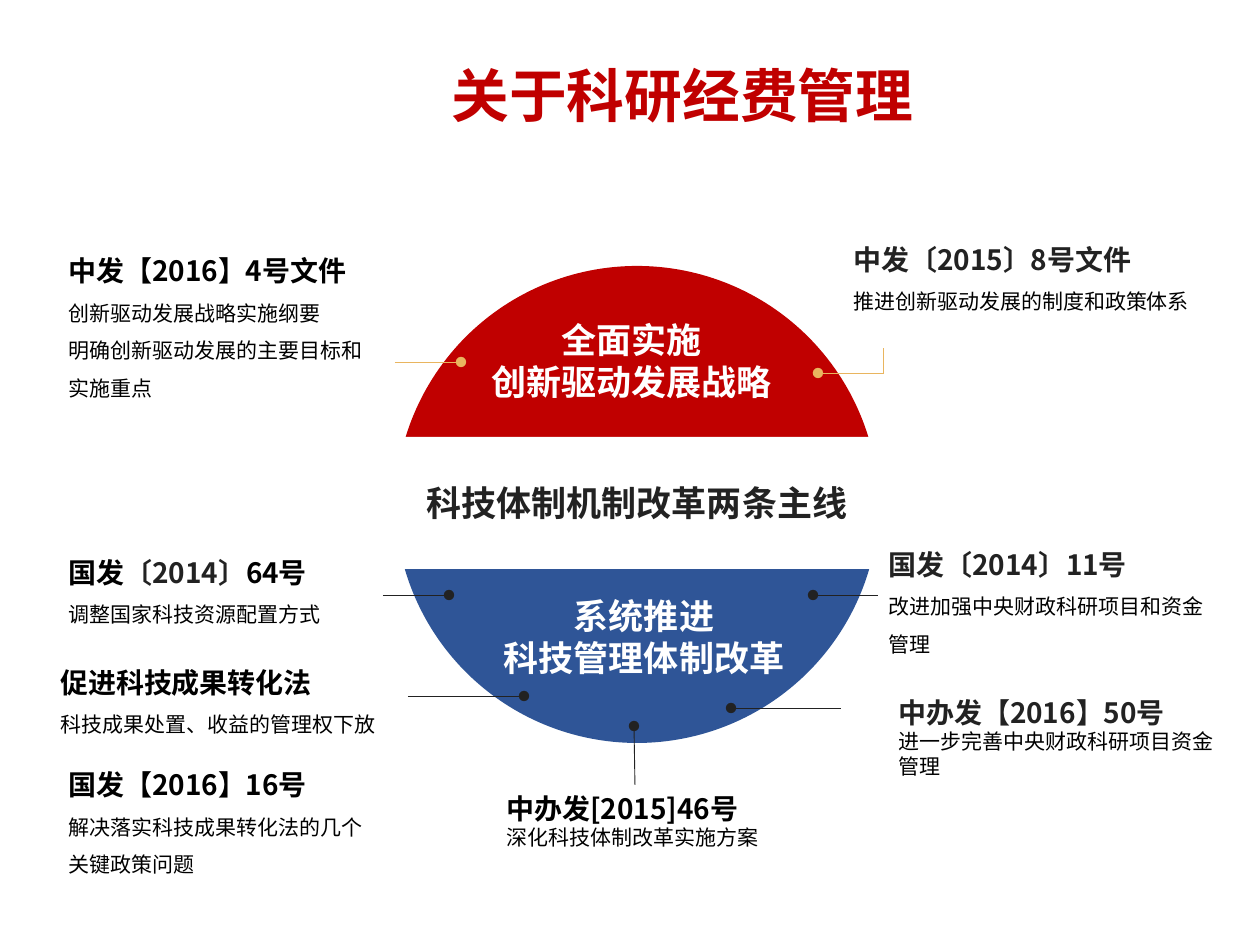
import math
from dataclasses import dataclass

import pptx
import pptx.dml.color
import pptx.enum.shapes
import pptx.enum.text
import pptx.oxml.ns
import pptx.util
from lxml import etree

PX = 914400 / 126
WIDTH, HEIGHT = 1260, 945


@dataclass(frozen=True)
class Theme:
    font: str = "Noto Sans CJK SC"
    red: str = "C00000"
    blue: str = "2F5597"
    gold: str = "E9B55F"
    dark: str = "222222"
    black: str = "000000"
    white: str = "FFFFFF"
    title: int = 33
    label: int = 20
    heading: int = 16
    body: int = 12
    hairline: float = 0.5


THEME = Theme()
ALIGN = pptx.enum.text.PP_ALIGN
ANCHOR = pptx.enum.text.MSO_ANCHOR
qn = pptx.oxml.ns.qn

# Half discs: centre x, centre y, radius, direction (1 down, -1 up), colour
HALF_DISCS = [
    (637, 501, 242, 1, THEME.blue),
    (637, 508, 242, -1, THEME.red),
]
BAND = (352, 437, 570, 132)

# Centred labels: frame, lines, size, colour
LABELS = [
    ((474, 312, 315, 97), ["全面实施", "创新驱动发展战略"], THEME.label, THEME.white),
    ((472, 588, 344, 97), ["系统推进", "科技管理体制改革"], THEME.label, THEME.white),
    (BAND, ["科技体制机制改革两条主线"], THEME.label, THEME.dark),
    ((168, 44, 1029, 100), ["关于科研经费管理"], THEME.title, THEME.red),
]

# Notes: frame, heading spans, body lines, heading spacing, body spacing
NOTES = {
    "innovation outline": (
        (56, 231, 328, 178), [("中发【2016】4号文件", THEME.black)],
        ["创新驱动发展战略实施纲要", "明确创新驱动发展的主要目标和实施重点"], 1.5, 1.5),
    "innovation system": (
        (841, 236, 418, 84), [("中发〔2015〕8号文件", THEME.dark)],
        ["推进创新驱动发展的制度和政策体系"], 1.0, 1.5),
    "resource allocation": (
        (56, 549, 387, 84),
        [("国发", THEME.black), ("〔2014〕", THEME.dark), ("64号", THEME.black)],
        ["调整国家科技资源配置方式"], 1.0, 1.5),
    "project funds": (
        (876, 541, 346, 123), [("国发〔2014〕11号", THEME.dark)],
        ["改进加强中央财政科研项目和资金管理"], 1.0, 1.5),
    "transfer law": (
        (48, 659, 393, 84), [("促进科技成果转化法", THEME.black)],
        ["科技成果处置、收益的管理权下放"], 1.0, 1.5),
    "transfer policy": (
        (56, 745, 339, 140), [("国发【2016】16号", THEME.black)],
        ["解决落实科技成果转化法的几个关键政策问题"], 1.5, 1.5),
    "reform plan": (
        (494, 785, 282, 72), [("中办发[2015]46号", THEME.black)],
        ["深化科技体制改革实施方案"], 1.0, 1.0),
    "fund management": (
        (886, 689, 343, 97), [("中办发【2016】50号", THEME.dark)],
        ["进一步完善中央财政科研项目资金管理"], 1.0, 1.0),
}

# Leaders: from, to, colour, dot at the end, note joined at its top
LEADERS = [
    ((883, 374), (883, 348), THEME.gold, False, None),
    ((884, 373), (818, 373), THEME.gold, True, None),
    ((395, 362), (461, 362), THEME.gold, True, None),
    ((878, 595), (813, 595), THEME.dark, True, None),
    ((383, 595), (449, 595), THEME.dark, True, None),
    ((408, 696), (524, 696), THEME.dark, True, None),
    ((635, 785), (634, 726), THEME.dark, True, "reform plan"),
    ((841, 708), (731, 708), THEME.dark, True, None),
]


def emu(*lengths):
    return [round(length * PX) for length in lengths]


def rgb(value):
    return pptx.dml.color.RGBColor.from_string(value)


def paint(shape, colour):
    shape.shadow.inherit = False
    shape.fill.solid()
    shape.fill.fore_color.rgb = rgb(colour)
    shape.line.fill.background()


def add_span(para, text, size, colour, bold):
    span = para.add_run()
    span.text = text
    values = {"name": THEME.font, "size": pptx.util.Pt(size), "bold": bold}
    for name, value in values.items():
        setattr(span.font, name, value)
    span.font.color.rgb = rgb(colour)
    east_asian = etree.SubElement(span.font._element, qn("a:ea"))
    east_asian.set("typeface", THEME.font)


def fill_text(box, rows, anchor, align):
    """Write rows of (spans, size, bold, line spacing) as paragraphs."""
    frame = box.text_frame
    frame.word_wrap = True
    frame.vertical_anchor = anchor
    for index, (spans, size, bold, spacing) in enumerate(rows):
        para = frame.add_paragraph() if index else frame.paragraphs[0]
        para.alignment = align
        para.line_spacing = spacing
        for text, colour in spans:
            add_span(para, text, size, colour, bold)


def add_half_disc(page, centre_x, centre_y, radius, direction, colour):
    """Draw a half disc whose rim is four Bezier arcs of equal angle."""
    turn = math.pi / 4
    reach = 4 / 3 * math.tan(turn / 4)
    top = centre_y if direction > 0 else centre_y - radius

    def rim(angle, pull=0):
        """Point on the rim, moved along the tangent by pull radii."""
        return (centre_x + radius * (math.cos(angle) - pull * math.sin(angle)),
                centre_y + direction * radius * (math.sin(angle) + pull * math.cos(angle)))

    angles = [turn * step for step in range(5)]
    builder = page.shapes.build_freeform(*emu(*rim(0)), scale=1.0)
    builder.add_line_segments([emu(*rim(angle)) for angle in angles[1:]], close=True)
    disc = builder.convert_to_shape()
    segments = list(disc._element.iter(qn("a:lnTo")))
    for segment, start, end in zip(segments, angles, angles[1:]):
        segment.tag = qn("a:cubicBezTo")
        for index, (x, y) in enumerate([rim(start, reach), rim(end, -reach)]):
            control = segment.makeelement(qn("a:pt"))
            for name, value in zip("xy", emu(x - centre_x + radius, y - top)):
                control.set(name, str(value))
            segment.insert(index, control)
    paint(disc, colour)


def add_label(page, frame, lines, size, colour):
    if frame == BAND:
        box = page.shapes.add_shape(pptx.enum.shapes.MSO_SHAPE.RECTANGLE, *emu(*frame))
        paint(box, THEME.white)
    else:
        box = page.shapes.add_textbox(*emu(*frame))
    rows = [([(line, colour)], size, True, 1.0) for line in lines]
    fill_text(box, rows, ANCHOR.MIDDLE, ALIGN.CENTER)


def add_note(page, frame, heading, body, heading_spacing, body_spacing):
    box = page.shapes.add_textbox(*emu(*frame))
    rows = [(heading, THEME.heading, True, heading_spacing)]
    rows += [([(line, THEME.black)], THEME.body, False, body_spacing) for line in body]
    fill_text(box, rows, ANCHOR.TOP, ALIGN.LEFT)
    return box


def add_leader(page, start, end, colour, dot, note):
    leader = page.shapes.add_connector(
        pptx.enum.shapes.MSO_CONNECTOR.STRAIGHT, *emu(*start, *end))
    leader.line.color.rgb = rgb(colour)
    leader.line.width = pptx.util.Pt(THEME.hairline)
    if dot:
        tail = etree.SubElement(leader.line._get_or_add_ln(), qn("a:tailEnd"))
        tail.set("type", "oval")
    etree.SubElement(leader._element.spPr, qn("a:effectLst"))
    if note is not None:
        leader.begin_connect(note, 0)


def main():
    deck = pptx.Presentation()
    deck.slide_width, deck.slide_height = emu(WIDTH, HEIGHT)
    page = deck.slides.add_slide(deck.slide_layouts[6])
    for disc in HALF_DISCS:
        add_half_disc(page, *disc)
    for label in LABELS:
        add_label(page, *label)
    notes = {name: add_note(page, *note) for name, note in NOTES.items()}
    for *leader, name in LEADERS:
        add_leader(page, *leader, notes.get(name))
    deck.save("out.pptx")


if __name__ == "__main__":
    main()
